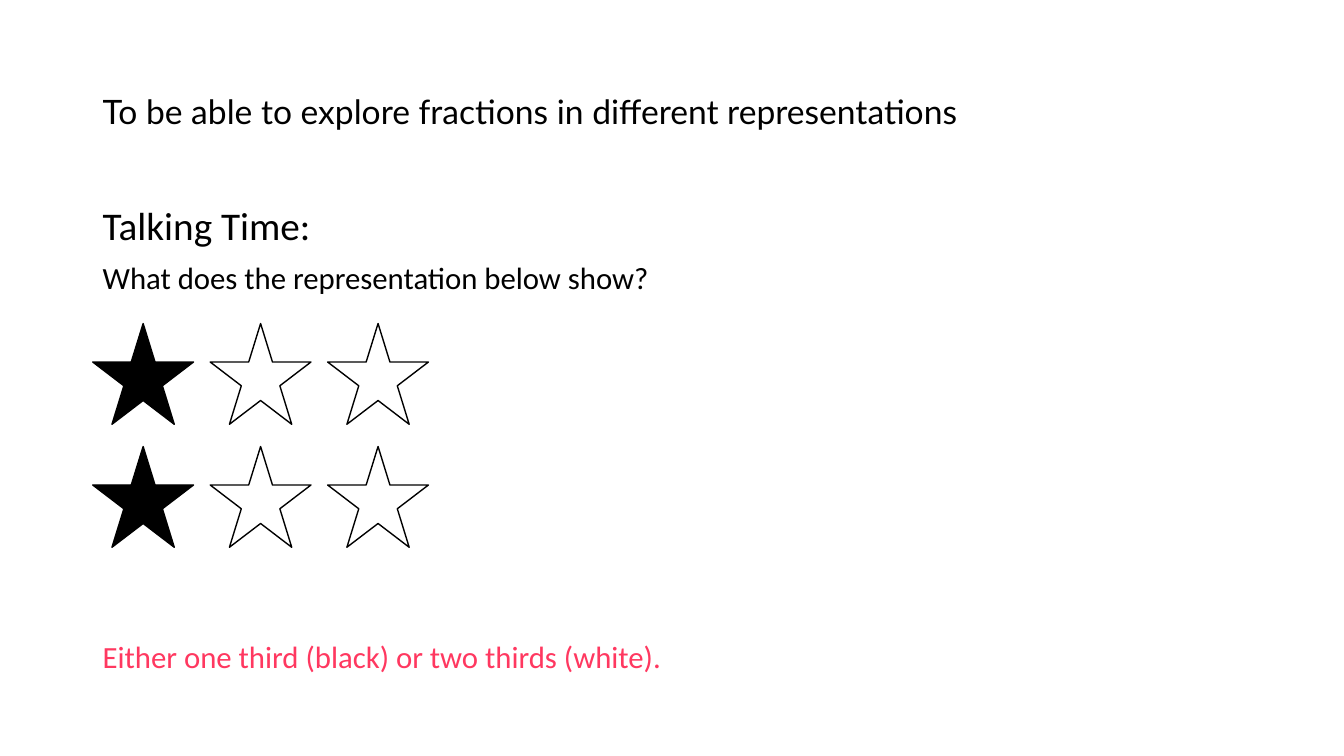
from pptx import Presentation
from pptx.dml.color import RGBColor
from pptx.enum.shapes import MSO_SHAPE
from pptx.enum.text import MSO_ANCHOR
from pptx.util import Inches, Pt

STAR = MSO_SHAPE.STAR_5_POINT
TOP, MIDDLE = MSO_ANCHOR.TOP, MSO_ANCHOR.MIDDLE
BLACK, WHITE, ANSWER = "000000", "FFFFFF", "FF3860"
LEFT = 0.92


def rgb(value):
    return RGBColor.from_string(value)


class SlideBuilder:
    line_spacing = 0.9
    space_before = Pt(10)

    def __init__(self, prs):
        self.s = prs.slides.add_slide(prs.slide_layouts[6])

    def text(self, x, y, w, h, lines, font="Calibri", color=BLACK, anchor=TOP):
        """Add a text box; lines holds (text, size in points) pairs."""
        sp = self.s.shapes.add_textbox(Inches(x), Inches(y), Inches(w), Inches(h))
        tf = sp.text_frame
        tf.word_wrap = True
        tf.vertical_anchor = anchor
        for i, (content, size) in enumerate(lines):
            p = tf.add_paragraph() if i else tf.paragraphs[0]
            p.text = content
            p.line_spacing = self.line_spacing
            if i:
                p.space_before = self.space_before
            p.font.name = font
            p.font.size = Pt(size)
            p.font.color.rgb = rgb(color)

    def star(self, x, y, fill, size=1):
        sp = self.s.shapes.add_shape(STAR, Inches(x), Inches(y), Inches(size), Inches(size))
        sp.shadow.inherit = False
        sp.fill.solid()
        sp.fill.fore_color.rgb = rgb(fill)
        sp.line.color.rgb = rgb(BLACK)
        sp.line.width = Pt(1)


def main():
    prs = Presentation()
    prs.slide_width, prs.slide_height = Inches(13.33), Inches(7.5)
    slide = SlideBuilder(prs)

    slide.text(LEFT, 0.4, 9.6, 1.45,
               [("To be able to explore fractions in different representations", 24)],
               font="Lato", anchor=MIDDLE)
    slide.text(LEFT, 2, 11.5, 1.1,
               [("Talking Time:", 28), ("What does the representation below show?", 22)])

    for row in range(2):
        for col, fill in enumerate((BLACK, WHITE, WHITE)):
            slide.star(LEFT + col * 1.165, 3.21 + row * 1.22, fill)

    slide.text(LEFT, 6.32, 11.5, 0.44,
               [("Either one third (black) or two thirds (white).", 22)], color=ANSWER)
    prs.save("out.pptx")


if __name__ == "__main__":
    main()
